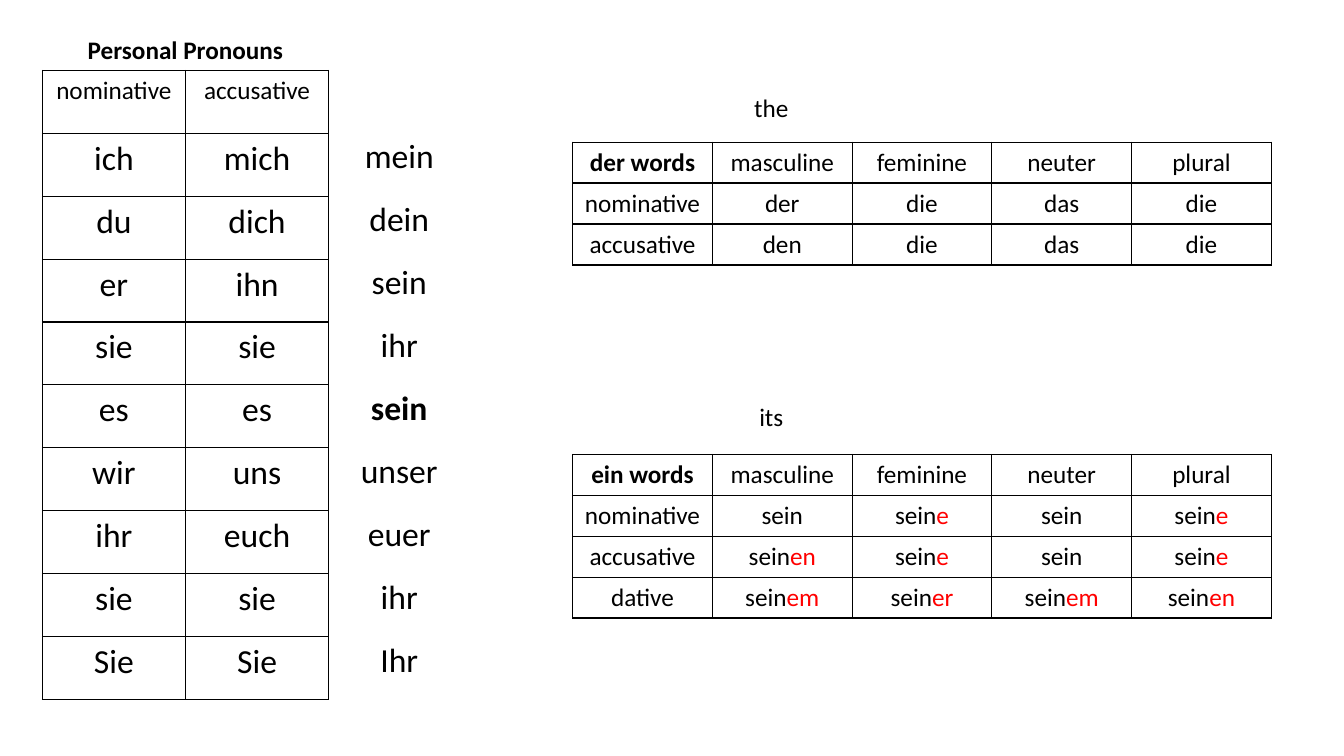
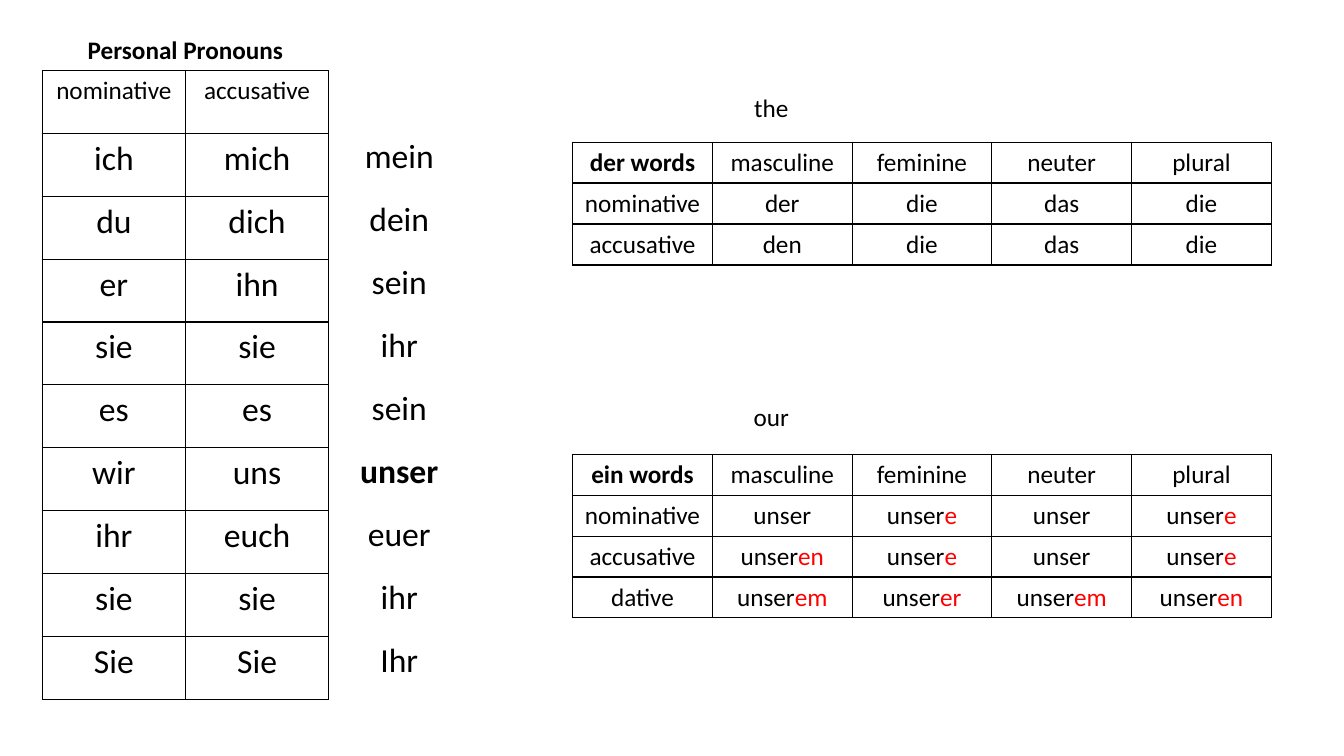
"""Build two slides of German pronouns, articles and possessive endings."""
from lxml.etree import SubElement
from pptx import Presentation
from pptx.dml.color import RGBColor
from pptx.enum.text import MSO_AUTO_SIZE, PP_ALIGN
from pptx.oxml.ns import qn
from pptx.util import Inches, Pt

COLORS = {"text": "000000", "border": "000000", "ending": "FF0000"}
FONT = "Calibri"
BODY, LARGE = 18, 24

SLIDES = [
    {"stem": "sein", "meaning": "its", "highlight": 4},
    {"stem": "unser", "meaning": "our", "highlight": 5},
]
PRONOUNS = [
    ("nominative", "accusative"),
    ("ich", "mich"),
    ("du", "dich"),
    ("er", "ihn"),
    ("sie", "sie"),
    ("es", "es"),
    ("wir", "uns"),
    ("ihr", "euch"),
    ("sie", "sie"),
    ("Sie", "Sie"),
]
POSSESSIVES = ["mein", "dein", "sein", "ihr", "sein", "unser", "euer", "ihr", "Ihr"]
GENDERS = ("masculine", "feminine", "neuter", "plural")
DER_WORDS = [
    ("der words", *GENDERS),
    ("nominative", "der", "die", "das", "die"),
    ("accusative", "den", "die", "das", "die"),
]
ENDINGS = {
    "nominative": ("", "e", "", "e"),
    "accusative": ("en", "e", "", "e"),
    "dative": ("em", "er", "em", "en"),
}


def style_run(span, size, bold=False, color="text"):
    span.font.name = FONT
    span.font.size = Pt(size)
    span.font.bold = bold
    span.font.color.rgb = RGBColor.from_string(COLORS[color])


def write(frame, text, size, bold=False, ending=""):
    para = frame.paragraphs[0]
    para.text = text
    para.alignment = PP_ALIGN.CENTER
    style_run(para.runs[0], size, bold)
    if ending:
        span = para.add_run()
        span.text = ending
        style_run(span, size, bold, "ending")


def add_label(page, left, top, text, bold=False):
    box = page.shapes.add_textbox(Inches(left), Inches(top), Inches(2.76), Inches(0.4))
    box.text_frame.word_wrap = True
    box.text_frame.auto_size = MSO_AUTO_SIZE.SHAPE_TO_FIT_TEXT
    write(box.text_frame, text, BODY, bold)


def add_borders(cell):
    properties = cell._tc.get_or_add_tcPr()
    for side in ("lnL", "lnR", "lnT", "lnB"):
        line = SubElement(properties, qn(f"a:{side}"), w=str(Pt(1)))
        fill = SubElement(line, qn("a:solidFill"))
        SubElement(fill, qn("a:srgbClr"), val=COLORS["border"])


def add_grid(page, place, rows, size=BODY, header_size=BODY, bold_cell=None, bordered=True):
    left, top, width, height = (Inches(value) for value in place)
    frame = page.shapes.add_table(len(rows), len(rows[0]), left, top, width, height)
    table = frame.table
    table.first_row = table.horz_banding = False
    for row_index, row in enumerate(rows):
        for column_index, content in enumerate(row):
            cell = table.cell(row_index, column_index)
            if bordered:
                add_borders(cell)
            cell.fill.background()
            text, ending = content if isinstance(content, tuple) else (content, "")
            bold = (row_index, column_index) == bold_cell
            write(cell.text_frame, text, size if row_index else header_size, bold, ending)


def build_slide(deck, stem, meaning, highlight):
    page = deck.slides.add_slide(deck.slide_layouts[6])
    ein_words = [("ein words", *GENDERS)]
    for case, endings in ENDINGS.items():
        ein_words.append((case, *((stem, ending) for ending in endings)))
    add_grid(page, (5.68, 4.51, 6.93, 1.62), ein_words, bold_cell=(0, 0))
    add_grid(page, (5.68, 1.41, 6.93, 1.22), DER_WORDS, bold_cell=(0, 0))
    add_grid(page, (0.42, 0.7, 2.84, 6.24), PRONOUNS, size=LARGE)
    add_label(page, 0.46, 0.29, "Personal Pronouns", bold=True)
    add_label(page, 6.27, 0.87, "the")
    add_label(page, 6.27, 3.93, meaning)
    add_grid(page, (3.33, 1.31, 1.26, 5.62), [(word,) for word in POSSESSIVES],
             LARGE, LARGE, (highlight, 0), bordered=False)


def main():
    deck = Presentation()
    deck.slide_width, deck.slide_height = Inches(13.33), Inches(7.5)
    for content in SLIDES:
        build_slide(deck, **content)
    deck.save("out.pptx")


if __name__ == "__main__":
    main()
